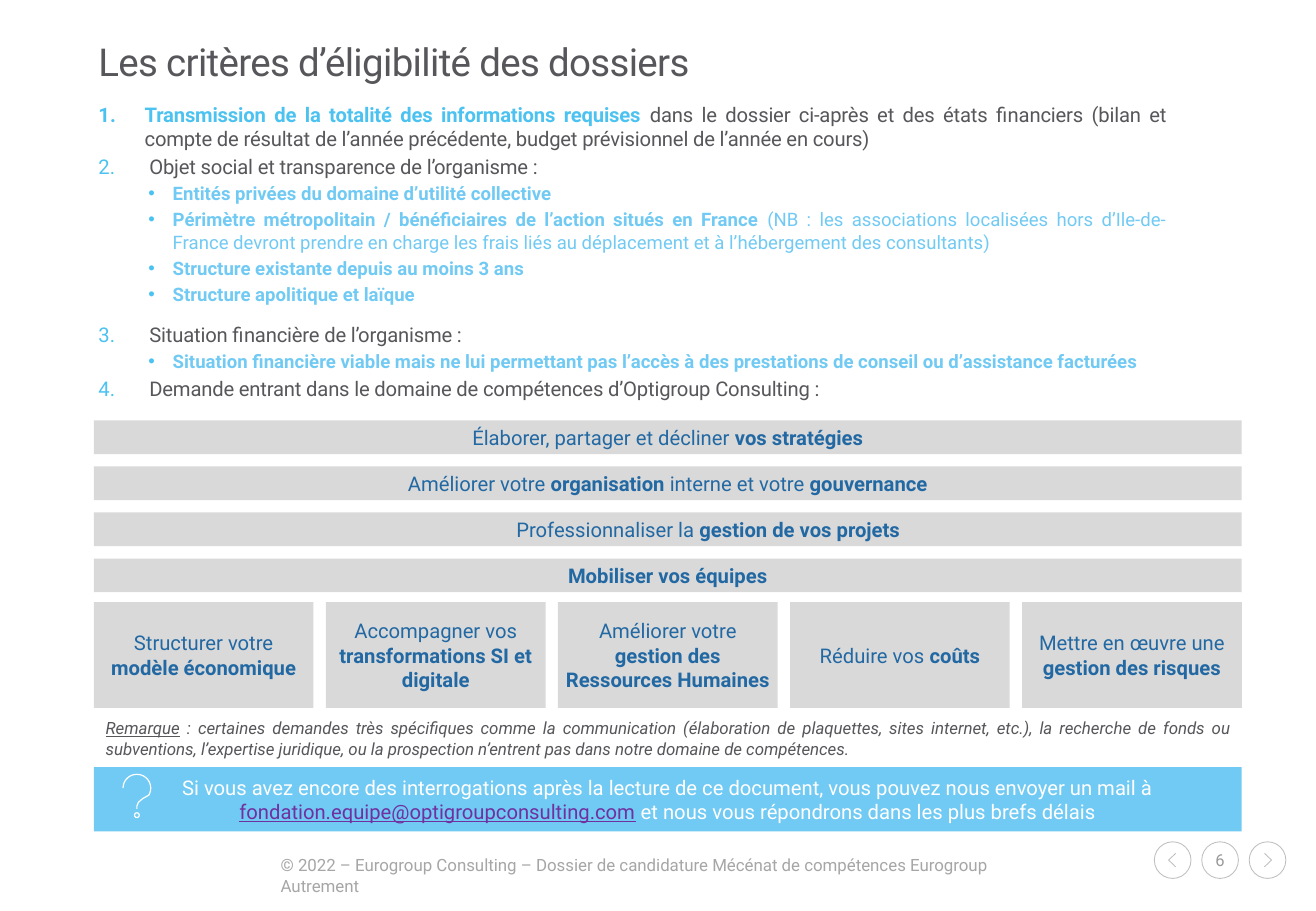
import math

import pptx
import pptx.dml.color
import pptx.enum.shapes
import pptx.enum.text
import pptx.util
from lxml import etree

Pt = pptx.util.Pt
ALIGN = pptx.enum.text.PP_ALIGN
ANCHOR = pptx.enum.text.MSO_ANCHOR
SHAPE = pptx.enum.shapes.MSO_SHAPE

COLORS = {
    "text": "57565A", "accent": "4CC2F1", "sky": "71CAF3", "blue": "2268A3",
    "band": "D9D9D9", "ring": "BFBFBF", "footer": "A6A6A6", "page": "9A9A9B",
    "mail": "7030A0", "white": "FFFFFF",
}
BOLD = {"bold": True}


def rgb(name):
    return pptx.dml.color.RGBColor.from_string(COLORS[name])


class Page:
    """Style and current slide."""

    font = "Roboto"

    def __init__(self, slide):
        self.slide = slide

    def add_runs(self, paragraph, runs, size, color, align=ALIGN.LEFT, spacing=0):
        """Fill a paragraph from (text, overrides) pairs."""
        paragraph.alignment = align
        for text, style in runs:
            run = paragraph.add_run()
            run.text = text
            run.font.name = self.font
            run.font.size = Pt(size)
            run.font.color.rgb = rgb(style.get("color", color))
            run.font.bold = style.get("bold", False)
            run.font.italic = style.get("italic", False)
            run.font.underline = style.get("underline", False)
            if spacing:
                run._r.get_or_add_rPr().set("spc", str(round(spacing * 100)))

    def frame(self, shape, inset, anchor):
        frame = shape.text_frame
        frame.word_wrap = True
        frame.vertical_anchor = anchor
        if inset is not None:
            frame.margin_left = frame.margin_right = Pt(inset)
            frame.margin_top = frame.margin_bottom = Pt(inset)
        return frame

    def textbox(self, left, top, width, height, inset=None, anchor=ANCHOR.TOP):
        box = self.slide.shapes.add_textbox(Pt(left), Pt(top), Pt(width), Pt(height))
        return self.frame(box, inset, anchor)

    def shape(self, kind, left, top, width, height, fill=None, line=None,
              inset=None, weight=0.5):
        shape = self.slide.shapes.add_shape(kind, Pt(left), Pt(top), Pt(width), Pt(height))
        self.paint(shape, fill, line, weight)
        return self.frame(shape, inset, ANCHOR.MIDDLE)

    def paint(self, shape, fill, line, weight):
        shape.shadow.inherit = False
        if fill:
            shape.fill.solid()
            shape.fill.fore_color.rgb = rgb(fill)
        else:
            shape.fill.background()
        if line:
            shape.line.color.rgb = rgb(line)
            shape.line.width = Pt(weight)
        else:
            shape.line.fill.background()

    def stroke(self, points, line, weight):
        """Draw an open outline through the points."""
        (x, y), *rest = [(Pt(px), Pt(py)) for px, py in points]
        builder = self.slide.shapes.build_freeform(x, y)
        builder.add_line_segments(rest, close=False)
        self.paint(builder.convert_to_shape(), None, line, weight)

    def bullet(self, paragraph, margin, hanging, number=None):
        """Set a round bullet, or an automatic number when one is given."""
        props = paragraph._p.get_or_add_pPr()
        props.set("marL", str(Pt(margin)))
        props.set("indent", str(-Pt(hanging)))
        namespace = "{http://schemas.openxmlformats.org/drawingml/2006/main}"
        color = etree.SubElement(props, namespace + "buClr")
        etree.SubElement(color, namespace + "srgbClr", val=COLORS["accent"])
        if number:
            etree.SubElement(props, namespace + "buAutoNum", type="arabicPeriod",
                             startAt=str(number))
        else:
            etree.SubElement(props, namespace + "buFont", typeface="Arial")
            etree.SubElement(props, namespace + "buChar", char="•")


LEFT, WIDTH = 55.6, 680.2
CRITERIA = [
    (1, [("Transmission de la totalité des informations requises ",
          {"bold": True, "color": "accent"}),
         ("dans le dossier ci-après et des états financiers (bilan et compte de résultat "
          "de l’année précédente, budget prévisionnel de l’année en cours)", {})]),
    (2, [("Objet social et transparence de l’organisme :", {})]),
    (None, [("Entités privées du domaine d’utilité collective", BOLD)]),
    (None, [("Périmètre métropolitain / bénéficiaires de l’action situés en France ", BOLD),
            ("(NB : les associations localisées hors d’Ile-de-France devront prendre en "
             "charge les frais liés au déplacement et à l’hébergement des consultants)", {})]),
    (None, [("Structure existante depuis au moins 3 ans", BOLD)]),
    (None, [("Structure apolitique et laïque", BOLD)]),
    (3, [("Situation financière de l’organisme :", {})]),
    (None, [("Situation financière viable mais ne lui permettant pas l’accès à des "
             "prestations de conseil ou d’assistance facturées", BOLD)]),
    (4, [("Demande entrant dans le domaine de compétences d’Optigroup Consulting :", {})]),
]
BANDS = [
    [("Élaborer, partager et décliner ", {}), ("vos stratégies", BOLD)],
    [("Améliorer votre ", {}), ("organisation", BOLD), (" interne et votre ", {}),
     ("gouvernance", BOLD)],
    [("Professionnaliser la ", {}), ("gestion de vos projets", BOLD)],
    [("Mobiliser vos équipes", BOLD)],
]
INDENTED_BAND = 2
TILES = [
    ("Structurer votre ", "modèle économique"),
    ("Accompagner vos ", "transformations SI et digitale"),
    ("Améliorer votre ", "gestion des Ressources Humaines"),
    ("Réduire vos ", "coûts"),
    ("Mettre en œuvre une ", "gestion des risques"),
]


def add_criteria(page):
    body = page.textbox(58.3, 60.5, 633, 192, inset=0)
    for index, (number, runs) in enumerate(CRITERIA):
        paragraph = body.paragraphs[0] if index == 0 else body.add_paragraph()
        if index:
            paragraph.space_before = Pt(10 if number == 3 else 2.2)
        if number:
            margin = 27.4 if number == 1 else 30.2
            page.bullet(paragraph, margin, margin, number)
            page.add_runs(paragraph, runs, 12, "text", ALIGN.JUSTIFY, -0.1)
        else:
            paragraph.level = 1
            page.bullet(paragraph, 44, 14.4)
            page.add_runs(paragraph, runs, 11, "sky", ALIGN.JUSTIFY)


def add_skills(page):
    for row, runs in enumerate(BANDS):
        band = page.shape(SHAPE.RECTANGLE, LEFT, 249.2 + row * 27.3, WIDTH, 20, "band", inset=2.8)
        if row == INDENTED_BAND:
            band.paragraphs[0]._p.get_or_add_pPr().set("marL", str(Pt(48)))
        page.add_runs(band.paragraphs[0], runs, 12, "blue", ALIGN.CENTER)
    for column, (lead, skill) in enumerate(TILES):
        tile = page.shape(SHAPE.RECTANGLE, LEFT + column * 137.5, 357, 130.2, 62.6,
                          "band", inset=2.8)
        page.add_runs(tile.paragraphs[0], [(lead, {}), (skill, BOLD)], 12, "blue", ALIGN.CENTER)


def add_contact(page):
    contact = page.shape(SHAPE.RECTANGLE, LEFT, 454.8, WIDTH, 38, "sky")
    page.add_runs(contact.paragraphs[0], [
        ("Si vous avez encore des interrogations après la lecture de ce document, "
         "vous pouvez nous envoyer un mail à ", {}),
        ("fondation.equipe@optigroupconsulting.com", {"color": "mail", "underline": True}),
        (" et nous vous répondrons dans les plus brefs délais", {}),
    ], 12, "white", ALIGN.CENTER)
    x, y, radius = 81.1, 467.2, 8.2
    hook = [(x + radius * math.cos(math.radians(a)), y + radius * math.sin(math.radians(a)))
            for a in range(180, 391, 10)]
    page.stroke(hook + [(84.5, 473.4), (82, 475.6), (x, 477.8), (x, 479.4)], "white", 0.7)
    page.shape(SHAPE.OVAL, x - 1.4, 481.8, 2.8, 2.8, line="white", weight=0.7)


def add_navigation(page):
    diameter, top = 21.7, 499
    for index, label in enumerate(["", "6", ""]):
        left = 684 + index * 28.1
        ring = page.shape(SHAPE.OVAL, left, top, diameter, diameter, line="ring", inset=0)
        if label:
            ring.word_wrap = False
            page.add_runs(ring.paragraphs[0], [(label, {})], 9.8, "page", ALIGN.CENTER)
        else:
            x, y, side = left + diameter / 2, top + diameter / 2, index - 1
            page.stroke([(x - 1.8 * side, y - 4), (x + 2.4 * side, y), (x - 1.8 * side, y + 4)],
                        "ring", 0.5)


def main():
    deck = pptx.Presentation()
    deck.slide_width, deck.slide_height = Pt(779.76), Pt(540)
    page = Page(deck.slides.add_slide(deck.slide_layouts[6]))

    title = page.textbox(58.3, 25.2, 663, 26.6, inset=0, anchor=ANCHOR.MIDDLE)
    title.paragraphs[0].line_spacing = 0.86
    page.add_runs(title.paragraphs[0], [("Les critères d’éligibilité des dossiers", {})],
                  22.8, "text", spacing=-0.4)
    add_criteria(page)
    add_skills(page)
    remark = page.textbox(LEFT, 422, WIDTH, 34.6)
    page.add_runs(remark.paragraphs[0], [
        ("Remarque", {"italic": True, "underline": True}),
        (" : certaines demandes très spécifiques comme la communication (élaboration de "
         "plaquettes, sites internet, etc.), la recherche de fonds ou subventions, l’expertise "
         "juridique, ou la prospection n’entrent pas dans notre domaine de compétences.",
         {"italic": True}),
    ], 10, "text", ALIGN.JUSTIFY)
    add_contact(page)
    footer = page.textbox(159.2, 503.3, 466, 19.4)
    page.add_runs(footer.paragraphs[0], [
        ("© 2022 – Eurogroup Consulting – Dossier de candidature Mécénat de compétences "
         "Eurogroup Autrement", {})], 10, "footer")
    add_navigation(page)
    deck.save("out.pptx")


if __name__ == "__main__":
    main()
